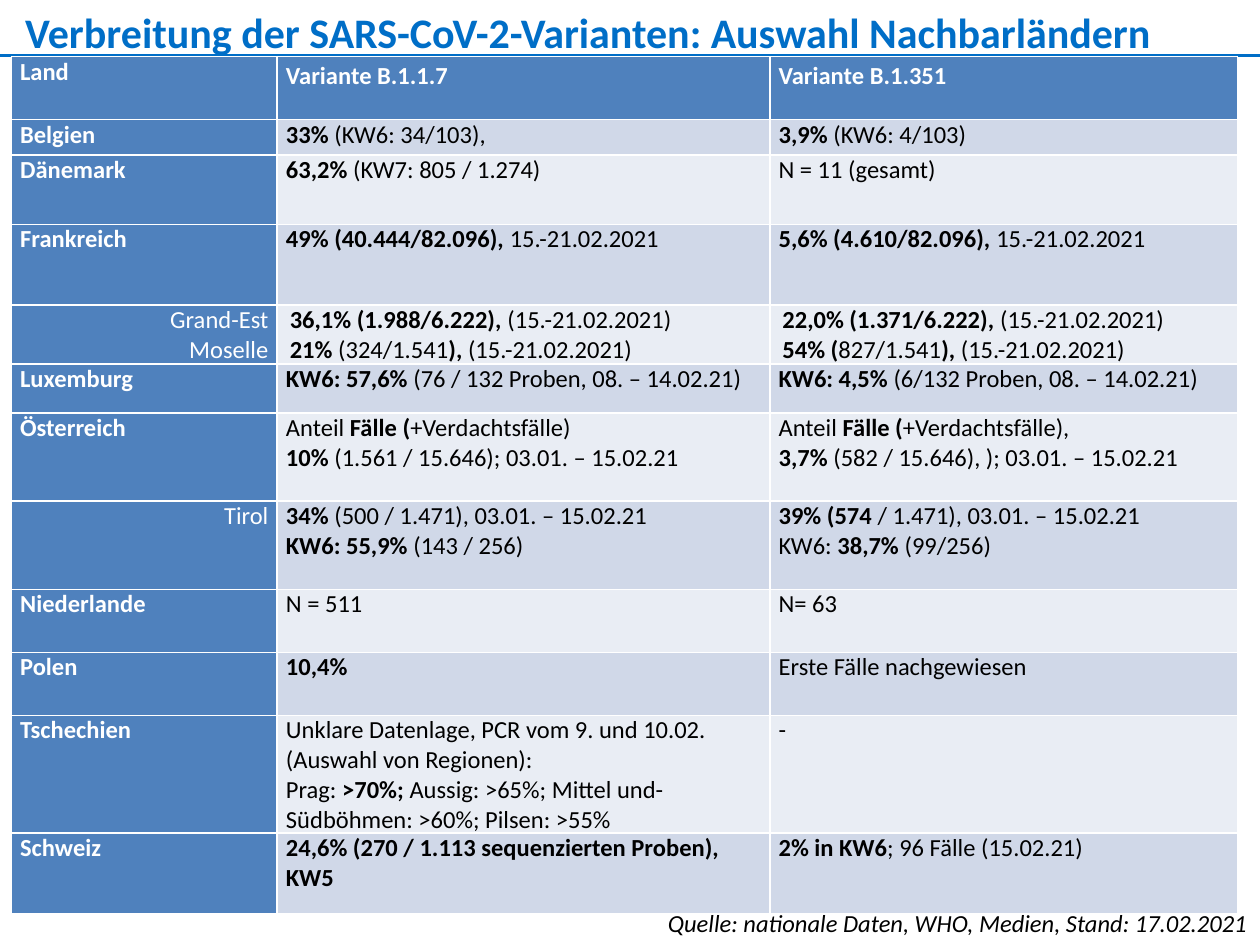
from pptx import Presentation
from pptx.dml.color import RGBColor
from pptx.enum.shapes import MSO_CONNECTOR
from pptx.enum.text import PP_ALIGN
from pptx.oxml.ns import qn
from pptx.util import Inches, Pt
from lxml import etree

LEFT, RIGHT = PP_ALIGN.LEFT, PP_ALIGN.RIGHT
STRAIGHT = MSO_CONNECTOR.STRAIGHT
TITLE_BLUE = RGBColor(0x00, 0x6E, 0xC7)
HEADER_BLUE = RGBColor(0x4F, 0x81, 0xBD)
BAND_DARK = RGBColor(0xD0, 0xD8, 0xE8)
BAND_LIGHT = RGBColor(0xE9, 0xED, 0xF4)
WHITE = RGBColor(0xFF, 0xFF, 0xFF)
BLACK = RGBColor(0x00, 0x00, 0x00)

COLUMN_WIDTHS = [2.11, 3.91, 3.71]
REGIONS = ("Grand-Est\nMoselle", "Tirol")

# Row height and cell texts; ** switches bold on and off, \n starts a paragraph
ROWS = [
    (0.5, "Land", "**Variante B.1.1.7**", "**Variante B.1.351**"),
    (0.28, "Belgien", "**33% **(KW6: 34/103),", "**3,9% **(KW6: 4/103)"),
    (0.55, "Dänemark", "**63,2%** (KW7: 805 / 1.274)", "N = 11 (gesamt)"),
    (0.64, "Frankreich", "**49% (40.444/82.096), **15.-21.02.2021",
     "**5,6% (4.610/82.096), **15.-21.02.2021"),
    (0.46, REGIONS[0],
     "**36,1% (1.988/6.222), **(15.-21.02.2021)\n**21% **(324/1.541**), **(15.-21.02.2021)",
     "**22,0% (1.371/6.222), **(15.-21.02.2021)\n**54% (**827/1.541**), **(15.-21.02.2021)"),
    (0.39, "Luxemburg", "**KW6: 57,6% **(76 / 132 Proben, 08. – 14.02.21)",
     "**KW6: 4,5% **(6/132 Proben, 08. – 14.02.21)"),
    (0.7, "Österreich",
     "Anteil **Fälle (**+Verdachtsfälle)\n**10% **(1.561 / 15.646); 03.01. – 15.02.21",
     "Anteil **Fälle (**+Verdachtsfälle),\n**3,7%** (582 / 15.646), ); 03.01. – 15.02.21"),
    (0.7, REGIONS[1],
     "**34% **(500 / 1.471), 03.01. – 15.02.21\n**KW6: 55,9%** (143 / 256)",
     "**39% (574** / 1.471), 03.01. – 15.02.21\nKW6: **38,7%** (99/256)"),
    (0.5, "Niederlande", "N = 511", "N= 63"),
    (0.5, "Polen", "**10,4%**", "Erste Fälle nachgewiesen"),
    (0.91, "Tschechien",
     "Unklare Datenlage, PCR vom 9. und 10.02. (Auswahl von Regionen):\n"
     "Prag: **>70%; **Aussig: >65%; Mittel und- Südböhmen: >60%; Pilsen: >55%", "-"),
    (0.64, "Schweiz", "**24,6% (270 / 1.113 sequenzierten Proben), KW5**",
     "**2% in KW6**; 96 Fälle (15.02.21)"),
]


def write_text(frame, text, size, color, alignment=LEFT):
    """Write paragraphs split at line breaks, with ** toggling bold."""
    frame.word_wrap = True
    for number, line in enumerate(text.split("\n")):
        paragraph = frame.add_paragraph() if number else frame.paragraphs[0]
        paragraph.alignment = alignment
        paragraph.font.name = "Calibri"
        for position, part in enumerate(line.split("**")):
            if part:
                run = paragraph.add_run()
                run.text = part
                run.font.name = "Calibri"
                run.font.size = Pt(size)
                run.font.color.rgb = color
                run.font.bold = position % 2 == 1


presentation = Presentation()
presentation.slide_width = Inches(10)
presentation.slide_height = Inches(7.5)
slide = presentation.slides.add_slide(presentation.slide_layouts[6])

title = slide.shapes.add_textbox(Inches(0.2), Inches(0.05), Inches(9.63), Inches(0.4))
title_frame = title.text_frame
title_frame.margin_left = title_frame.margin_right = 0
title_frame.margin_top = title_frame.margin_bottom = 0
write_text(title_frame, "**Verbreitung der SARS-CoV-2-Varianten: Auswahl Nachbarländern**",
           24, TITLE_BLUE)

title_line = slide.shapes.add_connector(
    STRAIGHT, Inches(0), Inches(0.44), Inches(10), Inches(0.44))
title_line.line.color.rgb = TITLE_BLUE
title_line.line.width = Pt(1.5)
etree.SubElement(title_line.element.spPr, qn("a:effectLst"))

source = slide.shapes.add_textbox(Inches(4.92), Inches(7.16), Inches(5.08), Inches(0.34))
write_text(source.text_frame, "Quelle: nationale Daten, WHO, Medien, Stand: 17.02.2021",
           14, BLACK, RIGHT)
source.text_frame.paragraphs[0].runs[0].font.italic = True

table = slide.shapes.add_table(
    len(ROWS), len(COLUMN_WIDTHS), Inches(0.09), Inches(0.45), Inches(9.73), Inches(6.8)).table
table.first_col = True
for column, width in zip(table.columns, COLUMN_WIDTHS):
    column.width = Inches(width)

for row_number, (height, country, *variants) in enumerate(ROWS):
    table.rows[row_number].height = Inches(height)
    is_region = country in REGIONS
    label = country if is_region else f"**{country}**"
    for column_number, text in enumerate([label, *variants]):
        cell = table.cell(row_number, column_number)
        is_heading = row_number == 0 or column_number == 0
        wide_margin = column_number > 0 and country == REGIONS[0]
        cell.margin_left = cell.margin_right = Inches(0.1 if wide_margin else 0.07)
        cell.margin_top = cell.margin_bottom = 0
        cell.fill.solid()
        if is_heading:
            cell.fill.fore_color.rgb = HEADER_BLUE
        else:
            cell.fill.fore_color.rgb = BAND_DARK if row_number % 2 else BAND_LIGHT
        write_text(cell.text_frame, text, 14, WHITE if is_heading else BLACK,
                   RIGHT if is_region and column_number == 0 else LEFT)
        if row_number == 0 and column_number > 0:
            cell.text_frame.paragraphs[0].line_spacing = 1.15

presentation.save("out.pptx")
